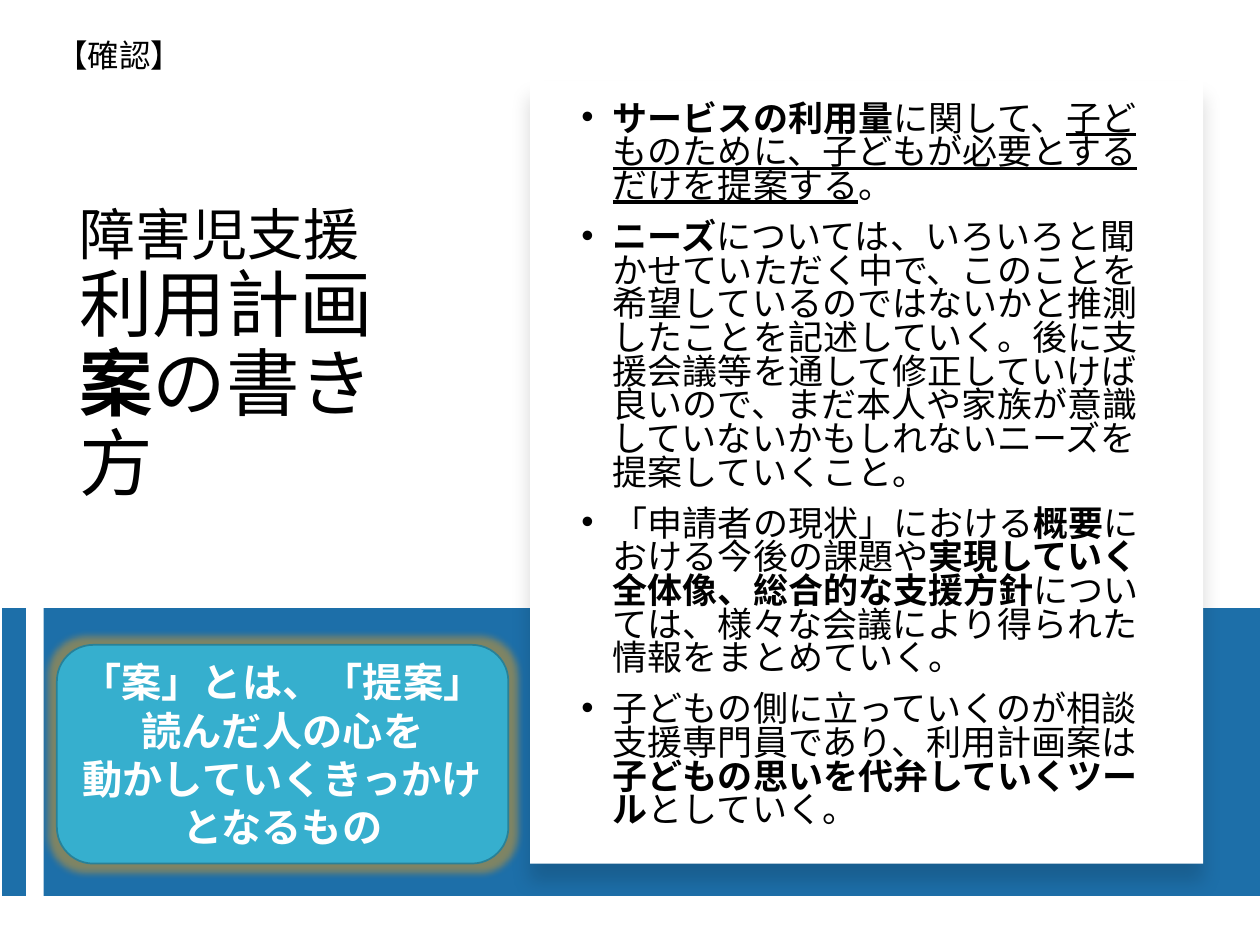
from pptx import Presentation, util as u
from pptx.dml import color
from pptx.enum import shapes, text
from pptx.oxml import ns, parse_xml

Pt = u.Pt
COLORS = {
    "band": "1D6FA9",
    "card": "FFFFFF",
    "callout": "36AFCE",
    "callout_edge": "288198",
    "glow": "E09A20",
    "shadow": "000000",
    "ink": "000000",
    "light": "FFFFFF",
}
FONT = "Calibri"
LABEL_FONT = "Noto Sans CJK JP"
PLAIN, BOLD, UNDERLINE = {}, {"bold": True}, {"underline": True}

TITLE_LINES = [
    (32, [("障害児支援", PLAIN)]),
    (42, [("利用計画", PLAIN), ("案", BOLD), ("の書き方", PLAIN)]),
]
POINTS = [
    [
        ("サービスの利用量", BOLD),
        ("に関して、", PLAIN),
        ("子どものために、子どもが必要とするだけを提案する", UNDERLINE),
        ("。", PLAIN),
    ],
    [
        ("ニーズ", BOLD),
        ("については、いろいろと聞かせていただく中で、このことを希望しているのではないかと"
         "推測したことを記述していく。後に支援会議等を通して修正していけば良いので、"
         "まだ本人や家族が意識していないかもしれないニーズを提案していくこと。", PLAIN),
    ],
    [
        ("「申請者の現状」における", PLAIN),
        ("概要", BOLD),
        ("における今後の課題や", PLAIN),
        ("実現していく全体像、総合的な支援方針", BOLD),
        ("については、様々な会議により得られた情報をまとめていく。", PLAIN),
    ],
    [
        ("子どもの側に立っていくのが相談支援専門員であり、利用計画案は", PLAIN),
        ("子どもの思いを代弁していくツール", BOLD),
        ("としていく。", PLAIN),
    ],
]
CALLOUT_LINES = ["「案」とは、「提案」読んだ人の心を", "動かしていくきっかけとなるもの"]


def rgb(name):
    return color.RGBColor.from_string(COLORS[name])


def place(item, box):
    item.left, item.top, item.width, item.height = (Pt(value) for value in box)


def add_run(para, words, size, ink="ink", font=FONT, bold=False, underline=False):
    span = para.add_run()
    span.text = words
    span.font.name = font
    span.font.size = Pt(size)
    span.font.bold = bold
    span.font.underline = underline
    span.font.color.rgb = rgb(ink)
    east_asian = span.font._element.makeelement(ns.qn("a:ea"), {"typeface": font})
    span.font._element.find(ns.qn("a:latin")).addnext(east_asian)


def add_block(page, kind, box, fill):
    block = page.shapes.add_shape(kind, *(Pt(value) for value in box))
    block.shadow.inherit = False
    block.fill.solid()
    block.fill.fore_color.rgb = rgb(fill)
    block.line.fill.background()
    return block


def set_effect(item, tag, name, alpha, **lengths):
    attributes = " ".join(f'{key}="{value}"' for key, value in lengths.items())
    effects = parse_xml(
        f'<a:effectLst {ns.nsdecls("a")}><a:{tag} {attributes}>'
        f'<a:srgbClr val="{COLORS[name]}"><a:alpha val="{alpha * 1000}"/></a:srgbClr>'
        f'</a:{tag}></a:effectLst>'
    )
    properties = item.element.spPr
    old = properties.find(ns.qn("a:effectLst"))
    properties.replace(old, effects)


def prepare_frame(item, anchor=text.MSO_ANCHOR.TOP):
    frame = item.text_frame
    frame.word_wrap = True
    frame.auto_size = text.MSO_AUTO_SIZE.NONE
    frame.vertical_anchor = anchor
    return frame


def build_band(page, box):
    left, top, width, height = box
    bar_width, gap = 18, 6
    main_left = left + bar_width + gap
    add_block(page, shapes.MSO_SHAPE.RECTANGLE,
              (main_left, top, width - bar_width - gap, height), "band")
    middle = Pt(left + bar_width / 2 - 2)
    bar = page.shapes.add_connector(
        shapes.MSO_CONNECTOR.STRAIGHT, middle, Pt(top), middle, Pt(top + height))
    bar.line.color.rgb = rgb("band")
    bar.line.width = Pt(14)
    bar.element.spPr.append(parse_xml(f'<a:effectLst {ns.nsdecls("a")}/>'))


def build_title(page, box):
    title = page.shapes.title
    place(title, box)
    para = prepare_frame(title).paragraphs[0]
    para.alignment = text.PP_ALIGN.LEFT
    para.line_spacing = 0.9
    for index, (size, spans) in enumerate(TITLE_LINES):
        if index:
            para.add_line_break()
        for words, style in spans:
            add_run(para, words, size, **style)


def build_card(page, box):
    left, top, width, height = box
    card = add_block(page, shapes.MSO_SHAPE.RECTANGLE, box, "card")
    set_effect(card, "outerShdw", "shadow", 15,
               blurRad=Pt(11), dist=Pt(10), dir=5400000)
    body = page.placeholders[1]
    card.element.addnext(body.element)
    place(body, (left + 22, top + 10, width - 38.5, height + 8.5))
    frame = prepare_frame(body)
    for index, spans in enumerate(POINTS):
        para = frame.add_paragraph() if index else frame.paragraphs[0]
        properties = para._p.get_or_add_pPr()
        properties.set("marL", str(Pt(18)))
        properties.set("indent", str(-Pt(18)))
        para.line_spacing = 0.8
        para.space_before = Pt(10 if index else 0)
        for words, style in spans:
            add_run(para, words, 20, **style)


def build_callout(page, box):
    callout = add_block(page, shapes.MSO_SHAPE.ROUNDED_RECTANGLE, box, "callout")
    callout.line.color.rgb = rgb("callout_edge")
    callout.line.width = Pt(1)
    set_effect(callout, "glow", "glow", 50, rad=Pt(8))
    frame = prepare_frame(callout, text.MSO_ANCHOR.MIDDLE)
    for index, words in enumerate(CALLOUT_LINES):
        para = frame.add_paragraph() if index else frame.paragraphs[0]
        para.alignment = text.PP_ALIGN.CENTER
        add_run(para, words, 23, ink="light", bold=True)


def build_label(page, box):
    label = page.shapes.add_textbox(*(Pt(value) for value in box))
    para = prepare_frame(label).paragraphs[0]
    add_run(para, "【確認】", 18, font=LABEL_FONT)


def main():
    deck = Presentation()
    deck.slide_width, deck.slide_height = Pt(720), Pt(540)
    page = deck.slides.add_slide(deck.slide_layouts[1])
    build_title(page, (38, 115, 224, 212))
    build_band(page, (1, 347.5, 719, 164.5))
    build_card(page, (303, 46, 384.5, 447.5))
    build_callout(page, (32.5, 368.5, 258, 125))
    build_label(page, (25, 17, 140, 29))
    deck.save("out.pptx")


if __name__ == "__main__":
    main()
